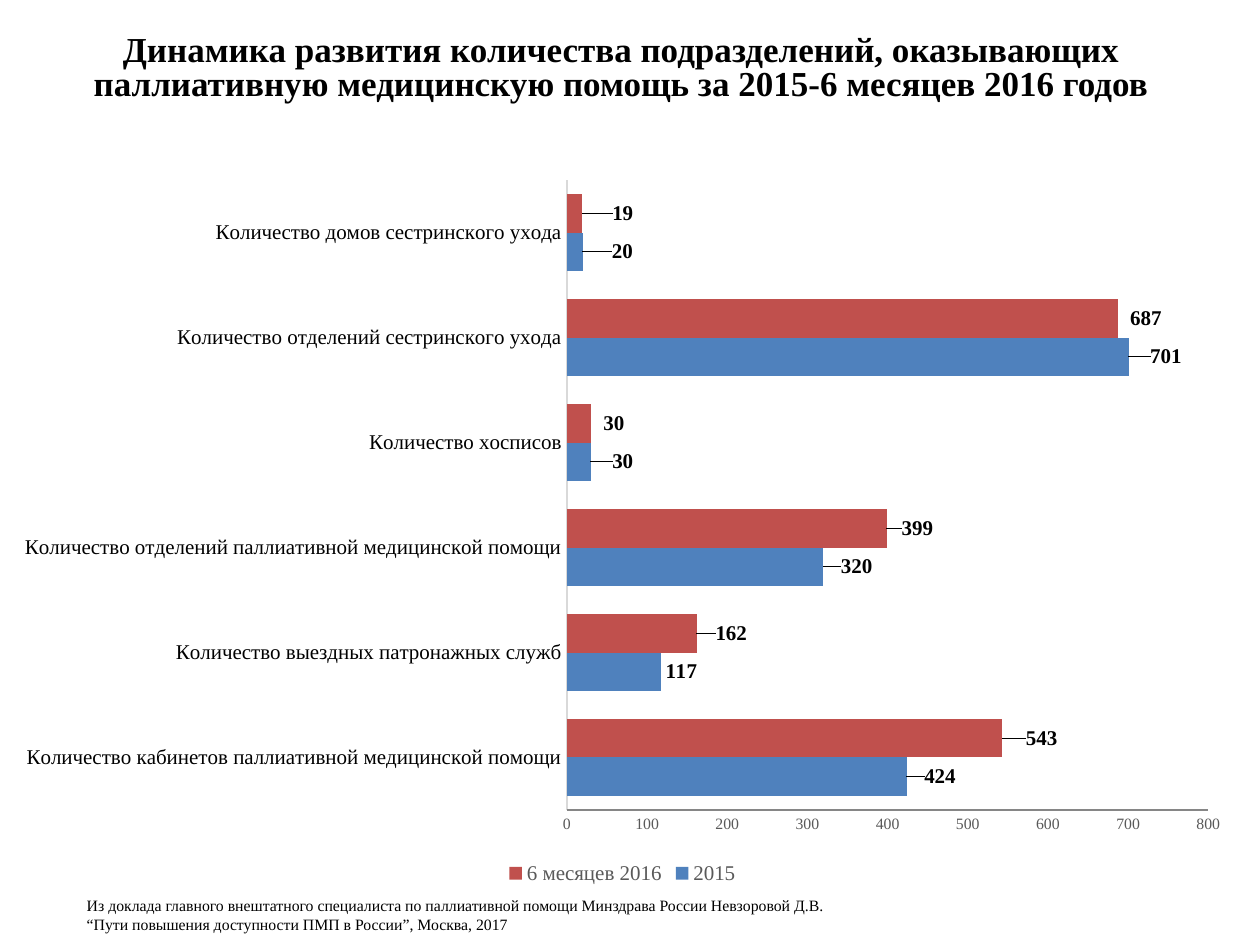
from lxml import etree
from pptx import Presentation
from pptx.chart.data import CategoryChartData
from pptx.dml.color import RGBColor
from pptx.enum.chart import XL_CHART_TYPE, XL_LABEL_POSITION, XL_LEGEND_POSITION, XL_TICK_MARK
from pptx.enum.text import MSO_ANCHOR, PP_ALIGN
from pptx.oxml.ns import qn
from pptx.util import Inches, Pt

BAR_CLUSTERED = XL_CHART_TYPE.BAR_CLUSTERED
OUTSIDE_END = XL_LABEL_POSITION.OUTSIDE_END
LEGEND_BOTTOM = XL_LEGEND_POSITION.BOTTOM
NO_TICK = XL_TICK_MARK.NONE
BOTTOM, TOP = MSO_ANCHOR.BOTTOM, MSO_ANCHOR.TOP
CENTER, LEFT = PP_ALIGN.CENTER, PP_ALIGN.LEFT

FONT = "Times New Roman"
COLORS = {
    "text": "000000", "muted": "595959", "category_line": "D9D9D9",
    "value_line": "868686", "2015": "4F81BD", "6 месяцев 2016": "C0504D",
}
TITLE = ("Динамика развития количества подразделений, оказывающих "
         "паллиативную медицинскую помощь за 2015-6 месяцев 2016 годов")
SOURCE = ("Из доклада главного внештатного специалиста по паллиативной помощи "
          "Минздрава России Невзоровой Д.В. “Пути повышения доступности ПМП "
          "в России”, Москва, 2017")
CATEGORIES = [
    "Количество кабинетов паллиативной медицинской помощи",
    "Количество выездных патронажных служб",
    "Количество отделений паллиативной медицинской помощи",
    "Количество хосписов",
    "Количество отделений сестринского ухода",
    "Количество домов сестринского ухода",
]
VALUES = {
    "2015": [424, 117, 320, 30, 701, 20],
    "6 месяцев 2016": [543, 162, 399, 30, 687, 19],
}
LABEL_SHIFTS = {
    "2015": [0.1, 0, 0.1, 0.13, 0.13, 0.19],
    "6 месяцев 2016": [0.15, 0.11, 0.08, 0.06, 0.06, 0.2],
}


def rgb(name):
    """Return the named colour."""
    return RGBColor.from_string(COLORS[name])


def style_font(font, size, color="text", bold=False):
    """Set typeface, size, colour and weight."""
    font.name, font.size, font.bold = FONT, Pt(size), bold
    font.color.rgb = rgb(color)


def add_text(slide, box, text, size, bold=False, anchor=TOP, alignment=LEFT):
    """Add a one-paragraph text box and return its frame."""
    frame = slide.shapes.add_textbox(*map(Inches, box)).text_frame
    frame.word_wrap = True
    frame.vertical_anchor = anchor
    paragraph = frame.paragraphs[0]
    paragraph.alignment = alignment
    run = paragraph.add_run()
    run.text = text
    style_font(run.font, size, bold=bold)
    return frame


def add_title(slide, box):
    """Place the centred heading with tight lines."""
    frame = add_text(slide, box, TITLE, 20, True, BOTTOM, CENTER)
    frame.margin_bottom = Inches(0.08)
    frame.paragraphs[0].line_spacing = 0.8


def add_source(slide, box):
    """Place the indented source note."""
    frame = add_text(slide, box, SOURCE, 9)
    properties = frame.paragraphs[0]._p.get_or_add_pPr()
    properties.set("marL", str(Inches(0.39)))
    properties.set("indent", "0")


def make_layout(**settings):
    """Build a manual chart layout element."""
    layout = etree.Element(qn("c:layout"))
    manual = etree.SubElement(layout, qn("c:manualLayout"))
    for name, value in settings.items():
        etree.SubElement(manual, qn(f"c:{name}")).set("val", str(value))
    return layout


def place_plot(chart, box, plot_box):
    """Fix the inner plot area within the chart box."""
    x, y, width, height = plot_box
    plot_area = chart._chartSpace.chart.plotArea
    for old_layout in plot_area.findall(qn("c:layout")):
        plot_area.remove(old_layout)
    plot_area.insert(0, make_layout(
        layoutTarget="inner", xMode="edge", yMode="edge",
        x=x / box[2], y=y / box[3], w=width / box[2], h=height / box[3]))


def style_axis(axis, size, color, line_color):
    """Style an axis without ticks or gridlines."""
    axis.has_major_gridlines = False
    axis.major_tick_mark = axis.minor_tick_mark = NO_TICK
    style_font(axis.tick_labels.font, size, color)
    axis.format.line.color.rgb = rgb(line_color)
    axis.format.line.width = Pt(0.75)


def style_series(series, chart_width):
    """Colour the bars and shift their value labels."""
    series.format.fill.solid()
    series.format.fill.fore_color.rgb = rgb(series.name)
    series.invert_if_negative = False
    labels = series.data_labels
    labels.show_value = True
    labels.position = OUTSIDE_END
    style_font(labels.font, 12, bold=True)
    for index, shift in enumerate(LABEL_SHIFTS[series.name]):
        if shift:
            label = series.points[index].data_label
            style_font(label.font, 12, bold=True)
            label.position = OUTSIDE_END
            element = labels._element.find(f"{qn('c:dLbl')}[{index_position(labels, index)}]")
            element.insert(1, make_layout(x=shift / chart_width, y=0))


def index_position(labels, index):
    """Return the one-based place of a point label."""
    indices = [label.find(qn("c:idx")).get("val")
               for label in labels._element.findall(qn("c:dLbl"))]
    return indices.index(str(index)) + 1


def add_units_chart(slide, box):
    """Place the bar chart of unit counts by year."""
    data = CategoryChartData()
    data.categories = CATEGORIES
    for name, values in VALUES.items():
        data.add_series(name, values)
    chart = slide.shapes.add_chart(BAR_CLUSTERED, *map(Inches, box), data).chart
    chart.has_title = False
    chart.font.name, chart.font.size = "Calibri", Pt(10)
    chart.font.color.rgb = rgb("text")
    chart.has_legend = True
    chart.legend.position = LEGEND_BOTTOM
    chart.legend.include_in_layout = False
    style_font(chart.legend.font, 12, "muted")
    style_axis(chart.category_axis, 12, "text", "category_line")
    style_axis(chart.value_axis, 9, "muted", "value_line")
    chart.value_axis.minimum_scale = 0
    chart.value_axis.maximum_scale = 800
    chart.value_axis.major_unit = 100
    plot = chart.plots[0]
    plot.gap_width, plot.overlap = 75, 0
    plot.vary_by_categories = False
    for series in plot.series:
        style_series(series, box[2])
    place_plot(chart, box, (4.5, 0.12, 5.09, 5))


def main():
    """Build and save the slide."""
    presentation = Presentation()
    presentation.slide_width, presentation.slide_height = Inches(10), Inches(7.5)
    slide = presentation.slides.add_slide(presentation.slide_layouts[6])
    add_units_chart(slide, (0, 1.31, 9.88, 5.75))
    add_source(slide, (0.2, 7.06, 6.54, 0.56))
    add_title(slide, (0.43, 0.52, 9, 0.38))
    presentation.save("out.pptx")


if __name__ == "__main__":
    main()
